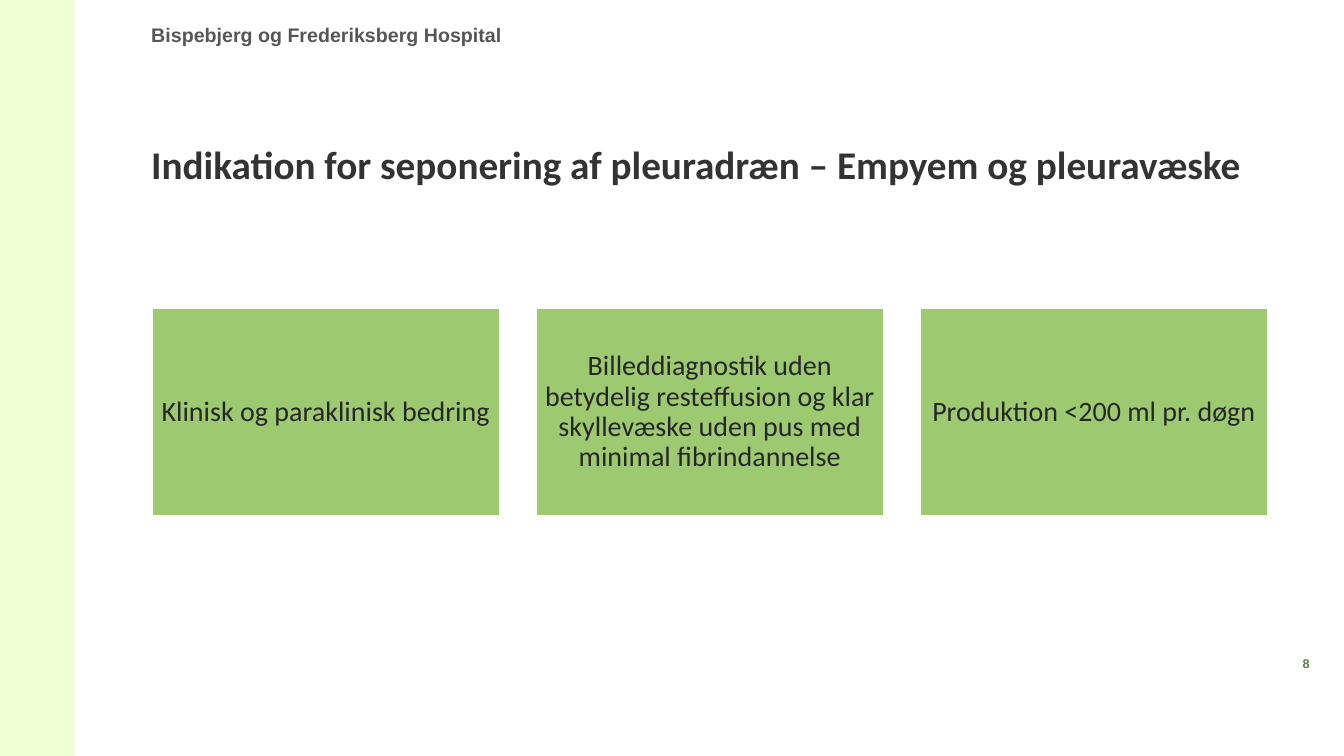
from dataclasses import dataclass

from pptx import Presentation
from pptx.dml.color import RGBColor
from pptx.enum.shapes import MSO_SHAPE as Shape
from pptx.enum.text import MSO_ANCHOR as Anchor, PP_ALIGN as Align
from pptx.shapes.autoshape import Shape as AutoShape
from pptx.slide import Slide
from pptx.util import Inches, Pt

SLIDE_WIDTH, SLIDE_HEIGHT = 13.33, 7.5

WHITE = RGBColor(0xFF, 0xFF, 0xFF)
PALE_GREEN = RGBColor(0xF0, 0xFF, 0xD6)
CARD_GREEN = RGBColor(0x9D, 0xCA, 0x70)
DARK_GREEN = RGBColor(0x56, 0x7F, 0x43)
HEADER_GREY = RGBColor(0x56, 0x56, 0x56)
TITLE_GREY = RGBColor(0x33, 0x33, 0x33)
CARD_TEXT = RGBColor(0x26, 0x26, 0x26)

# The margin is twice the side band; the number column is as wide as the band.
BAND = 0.75
MARGIN = 2 * BAND
CONTENT_WIDTH = SLIDE_WIDTH - MARGIN - BAND

INDICATIONS = (
    "Klinisk og paraklinisk bedring",
    "Billeddiagnostik uden betydelig resteffusion og klar "
    "skyllevæske uden pus med minimal fibrindannelse",
    "Produktion <200 ml pr. døgn",
)
# Gaps are a tenth of a card's width; cards have a 5:3 shape.
CARD_WIDTH = CONTENT_WIDTH / (len(INDICATIONS) + 0.1 * (len(INDICATIONS) - 1))
CARD_HEIGHT = 0.6 * CARD_WIDTH
CARD_PITCH = 1.1 * CARD_WIDTH
CARD_TOP = 3.05


@dataclass(frozen=True)
class Box:
    left: float
    top: float
    width: float
    height: float

    def emu(self) -> tuple[int, int, int, int]:
        return (Inches(self.left), Inches(self.top),
                Inches(self.width), Inches(self.height))


@dataclass(frozen=True)
class TextStyle:
    font: str
    size: int
    color: RGBColor
    bold: bool = True
    align: Align = Align.LEFT
    anchor: Anchor = Anchor.TOP
    line_spacing: float = 1.0
    space_after: int = 0
    inset: float = 0


@dataclass(frozen=True)
class Label:
    text: str
    box: Box
    style: TextStyle


CARD_STYLE = TextStyle("Calibri", 20, CARD_TEXT, bold=False, align=Align.CENTER,
                       anchor=Anchor.MIDDLE, line_spacing=0.9,
                       space_after=7, inset=0.08)

LABELS = (
    Label("Bispebjerg og Frederiksberg Hospital",
          Box(MARGIN, 0.23, SLIDE_WIDTH / 2, 0.24),
          TextStyle("Arial", 14, HEADER_GREY)),
    Label("Indikation for seponering af pleuradræn – Empyem og pleuravæske",
          Box(MARGIN, 0.95, CONTENT_WIDTH, 0.91),
          TextStyle("Calibri", 28, TITLE_GREY, anchor=Anchor.BOTTOM,
                    line_spacing=0.85)),
    Label("8", Box(SLIDE_WIDTH - BAND, 6.51, BAND, 0.2),
          TextStyle("Arial", 9, DARK_GREEN, align=Align.CENTER)),
)


def write_text(shape: AutoShape, text: str, style: TextStyle) -> None:
    frame = shape.text_frame
    frame.text = text
    frame.word_wrap = True
    frame.vertical_anchor = style.anchor
    frame.margin_left = frame.margin_right = Inches(style.inset)
    frame.margin_top = frame.margin_bottom = Inches(style.inset)
    paragraph = frame.paragraphs[0]
    paragraph.alignment = style.align
    paragraph.line_spacing = style.line_spacing
    paragraph.space_after = Pt(style.space_after)
    font = paragraph.runs[0].font
    font.name, font.size, font.bold = style.font, Pt(style.size), style.bold
    font.color.rgb = style.color


def add_rectangle(slide: Slide, box: Box, fill: RGBColor) -> AutoShape:
    shape = slide.shapes.add_shape(Shape.RECTANGLE, *box.emu())
    shape.shadow.inherit = False
    shape.fill.solid()
    shape.fill.fore_color.rgb = fill
    shape.line.fill.background()
    return shape


def add_label(slide: Slide, label: Label) -> None:
    write_text(slide.shapes.add_textbox(*label.box.emu()), label.text, label.style)


def add_card(slide: Slide, column: int, text: str) -> None:
    box = Box(MARGIN + column * CARD_PITCH, CARD_TOP, CARD_WIDTH, CARD_HEIGHT)
    card = add_rectangle(slide, box, CARD_GREEN)
    card.line.color.rgb = WHITE
    card.line.width = Pt(2)
    write_text(card, text, CARD_STYLE)


def main() -> None:
    presentation = Presentation()
    presentation.slide_width = Inches(SLIDE_WIDTH)
    presentation.slide_height = Inches(SLIDE_HEIGHT)
    slide = presentation.slides.add_slide(presentation.slide_layouts[6])

    add_rectangle(slide, Box(0, 0, BAND, SLIDE_HEIGHT), PALE_GREEN)
    for label in LABELS:
        add_label(slide, label)
    for column, text in enumerate(INDICATIONS):
        add_card(slide, column, text)

    presentation.save("out.pptx")


if __name__ == "__main__":
    main()
